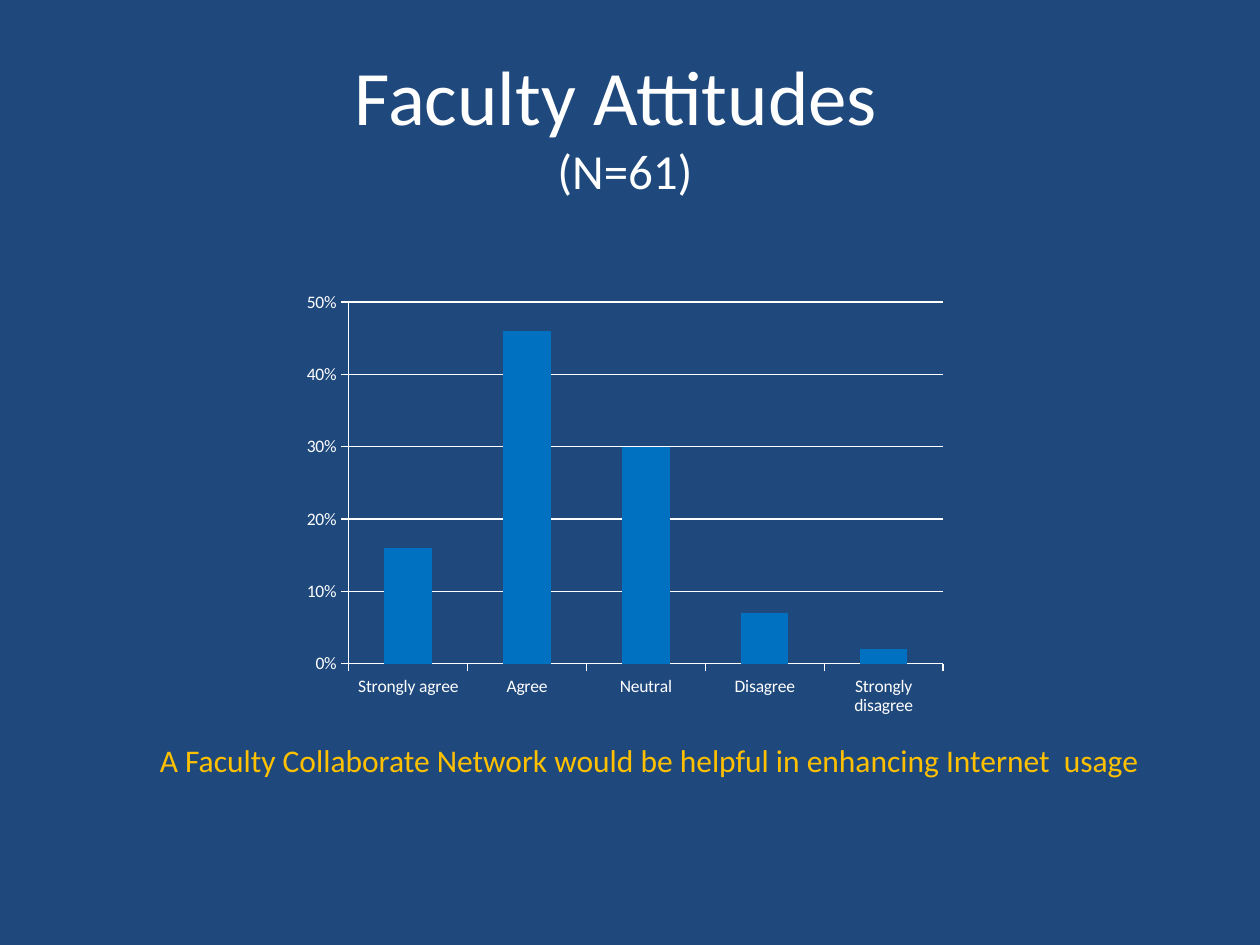
from typing import NamedTuple

from pptx import Presentation
from pptx.chart.data import CategoryChartData
from pptx.dml.color import RGBColor
from pptx.enum.chart import XL_CHART_TYPE, XL_TICK_MARK
from pptx.enum.text import MSO_ANCHOR, PP_ALIGN
from pptx.util import Inches, Pt

COLORS = {"background": "1F497D", "text": "FFFFFF", "bar": "0070C0", "caption": "FFC000"}
FONT = "Calibri"
RESPONSES = {
    "Strongly agree": 0.16,
    "Agree": 0.46,
    "Neutral": 0.30,
    "Disagree": 0.07,
    "Strongly disagree": 0.02,
}


class Box(NamedTuple):
    left: float
    top: float
    width: float
    height: float

    def lengths(self) -> list:
        return [Inches(value) for value in self]


class Line(NamedTuple):
    text: str
    size: int


TITLE_BOX = Box(0.42, 0.3, 9.08, 1.37)
CHART_BOX = Box(2.33, 2.25, 5.26, 3.5)
CAPTION_BOX = Box(1.17, 5.83, 8.33, 0.4)


def color(name: str) -> RGBColor:
    return RGBColor.from_string(COLORS[name])


def style_font(font, color_name: str) -> None:
    font.name = FONT
    font.color.rgb = color(color_name)


def add_text(slide, box: Box, lines: list[Line], color_name: str,
             alignment=PP_ALIGN.LEFT, anchor=MSO_ANCHOR.TOP) -> None:
    """Add one paragraph whose lines are parted by line breaks."""
    frame = slide.shapes.add_textbox(*box.lengths()).text_frame
    frame.word_wrap = True
    frame.vertical_anchor = anchor
    paragraph = frame.paragraphs[0]
    paragraph.alignment = alignment
    style_font(paragraph.font, color_name)
    for index, line in enumerate(lines):
        if index:
            paragraph.add_line_break()
        run = paragraph.add_run()
        run.text = line.text
        run.font.size = Pt(line.size)


def add_response_chart(slide) -> None:
    data = CategoryChartData(number_format="0%")
    data.categories = list(RESPONSES)
    data.add_series("Series 1", list(RESPONSES.values()))
    chart = slide.shapes.add_chart(
        XL_CHART_TYPE.COLUMN_CLUSTERED, *CHART_BOX.lengths(), data).chart
    chart.has_legend = False
    chart.has_title = False
    chart.font.size = Pt(10)
    style_font(chart.font, "text")

    plot = chart.plots[0]
    plot.gap_width = 150
    plot.vary_by_categories = False
    fill = plot.series[0].format.fill
    fill.solid()
    fill.fore_color.rgb = color("bar")

    value_axis = chart.value_axis
    value_axis.minimum_scale = 0
    value_axis.maximum_scale = 0.5
    value_axis.major_unit = 0.1
    value_axis.has_major_gridlines = True
    value_axis.tick_labels.number_format = "0%"
    value_axis.tick_labels.number_format_is_linked = False
    for axis in (chart.category_axis, value_axis):
        axis.major_tick_mark = XL_TICK_MARK.OUTSIDE
    for part in (chart.category_axis, value_axis, value_axis.major_gridlines):
        part.format.line.color.rgb = color("text")
        part.format.line.width = Pt(0.75)


def main() -> None:
    presentation = Presentation()
    presentation.slide_width = Inches(10)
    presentation.slide_height = Inches(7.5)
    slide = presentation.slides.add_slide(presentation.slide_layouts[6])
    slide.background.fill.solid()
    slide.background.fill.fore_color.rgb = color("background")

    add_text(slide, TITLE_BOX, [Line("Faculty Attitudes ", 44), Line("(N=61)", 28)],
             "text", PP_ALIGN.CENTER, MSO_ANCHOR.MIDDLE)
    add_response_chart(slide)
    caption = "A Faculty Collaborate Network would be helpful in enhancing Internet  usage"
    add_text(slide, CAPTION_BOX, [Line(caption, 18)], "caption")
    presentation.save("out.pptx")


if __name__ == "__main__":
    main()
